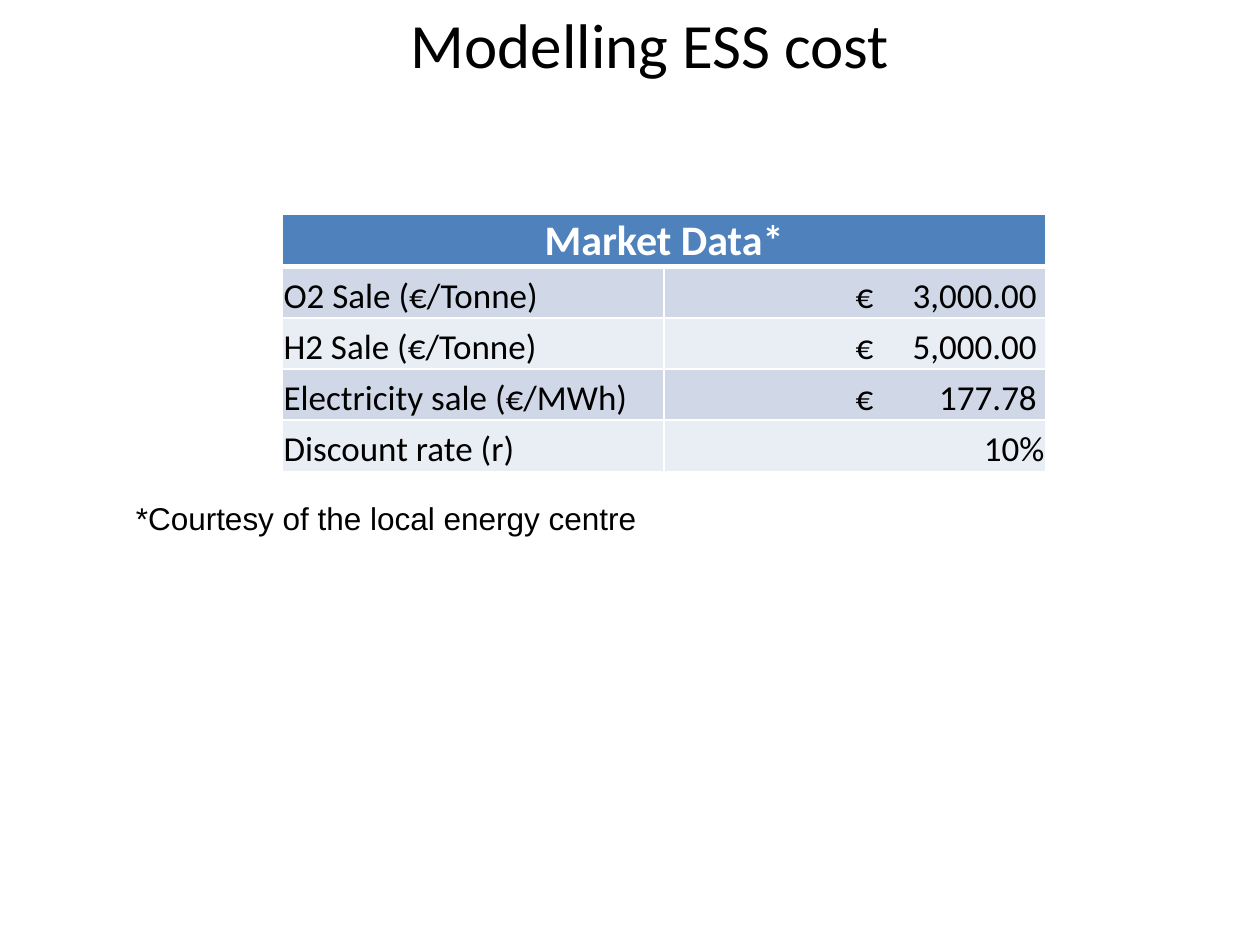
from typing import NamedTuple

from lxml.etree import SubElement
from pptx import Presentation
from pptx.dml.color import RGBColor
from pptx.enum.text import MSO_ANCHOR as Anchor, PP_ALIGN as Align
from pptx.oxml.ns import qn
from pptx.util import Inches, Pt

COLORS = {
    "text": "000000",
    "white": "FFFFFF",
    "header": "4F81BD",
    "odd": "D0D8E8",
    "even": "E9EDF4",
}
CELL_MARGINS = {"margin_left": 0.01, "margin_top": 0.01, "margin_right": 0.01, "margin_bottom": 0}


class Style(NamedTuple):
    size: int
    font: str = "Calibri"
    color: str = "text"
    bold: bool = False
    align: Align = Align.LEFT


class Label(NamedTuple):
    text: str
    box: tuple[float, float, float, float]
    style: Style
    anchor: Anchor


class MarketRow(NamedTuple):
    name: str
    value: str


LABELS = [
    Label("Modelling ESS cost", (2.27, 0, 5.78, 0.68), Style(36, align=Align.CENTER), Anchor.MIDDLE),
    Label("*Courtesy of the local energy centre", (0.98, 3.91, 8.74, 0.4), Style(18, "Arial"), Anchor.TOP),
]
HEADER = Style(24, color="white", bold=True, align=Align.CENTER)
BODY = Style(20)
ROWS = [
    MarketRow("O2 Sale (€/Tonne)", "€\t3,000.00"),
    MarketRow("H2 Sale (€/Tonne)", "€\t5,000.00"),
    MarketRow("Electricity sale (€/MWh)", "€\t177.78"),
    MarketRow("Discount rate (r)", "10%"),
]


def rgb(name: str) -> RGBColor:
    return RGBColor.from_string(COLORS[name])


def write(tf, text: str, style: Style) -> None:
    p = tf.paragraphs[0]
    p.alignment = style.align
    r = p.add_run()
    r.text = text
    formats = {"size": Pt(style.size), "name": style.font, "bold": style.bold}
    for key, value in formats.items():
        setattr(r.font, key, value)
    r.font.color.rgb = rgb(style.color)


def add_label(s, label: Label) -> None:
    tf = s.shapes.add_textbox(*map(Inches, label.box)).text_frame
    tf.word_wrap = True
    tf.vertical_anchor = label.anchor
    write(tf, label.text, label.style)


def set_borders(cell, widths: dict[str, int]) -> None:
    tc_pr = cell._tc.get_or_add_tcPr()
    for side, width in widths.items():
        line = SubElement(tc_pr, qn(f"a:ln{side}"), w=str(Pt(width)))
        fill = SubElement(line, qn("a:solidFill"))
        SubElement(fill, qn("a:srgbClr"), val=COLORS["white"])


def fill_cell(cell, text: str, style: Style, fill: str, top: int = 1, bottom: int = 1) -> None:
    set_borders(cell, {"L": 1, "R": 1, "T": top, "B": bottom})
    cell.fill.solid()
    cell.fill.fore_color.rgb = rgb(fill)
    cell.vertical_anchor = Anchor.BOTTOM
    for key, value in CELL_MARGINS.items():
        setattr(cell, key, Inches(value))
    if "\t" in text:
        cell.margin_left = Inches(1.52)
        p_pr = cell.text_frame.paragraphs[0]._p.get_or_add_pPr()
        tabs = SubElement(p_pr, qn("a:tabLst"))
        SubElement(tabs, qn("a:tab"), pos=str(Inches(1.44)), algn="r")
    write(cell.text_frame, text, style)


def add_market_table(s) -> None:
    box = map(Inches, (2.24, 1.7, 6.06, 2.03))
    table = s.shapes.add_table(len(ROWS) + 1, 2, *box).table
    table.cell(0, 0).merge(table.cell(0, 1))
    fill_cell(table.cell(0, 0), "Market Data*", HEADER, "header", bottom=3)
    for i, row in enumerate(ROWS, 1):
        fill = "odd" if i % 2 else "even"
        top = 3 if i == 1 else 1
        value_align = Align.LEFT if "\t" in row.value else Align.RIGHT
        fill_cell(table.cell(i, 0), row.name, BODY, fill, top)
        fill_cell(table.cell(i, 1), row.value, BODY._replace(align=value_align), fill, top)


def main() -> None:
    prs = Presentation()
    prs.slide_width, prs.slide_height = Inches(10), Inches(7.5)
    s = prs.slides.add_slide(prs.slide_layouts[6])
    add_market_table(s)
    for label in LABELS:
        add_label(s, label)
    prs.save("out.pptx")


if __name__ == "__main__":
    main()
